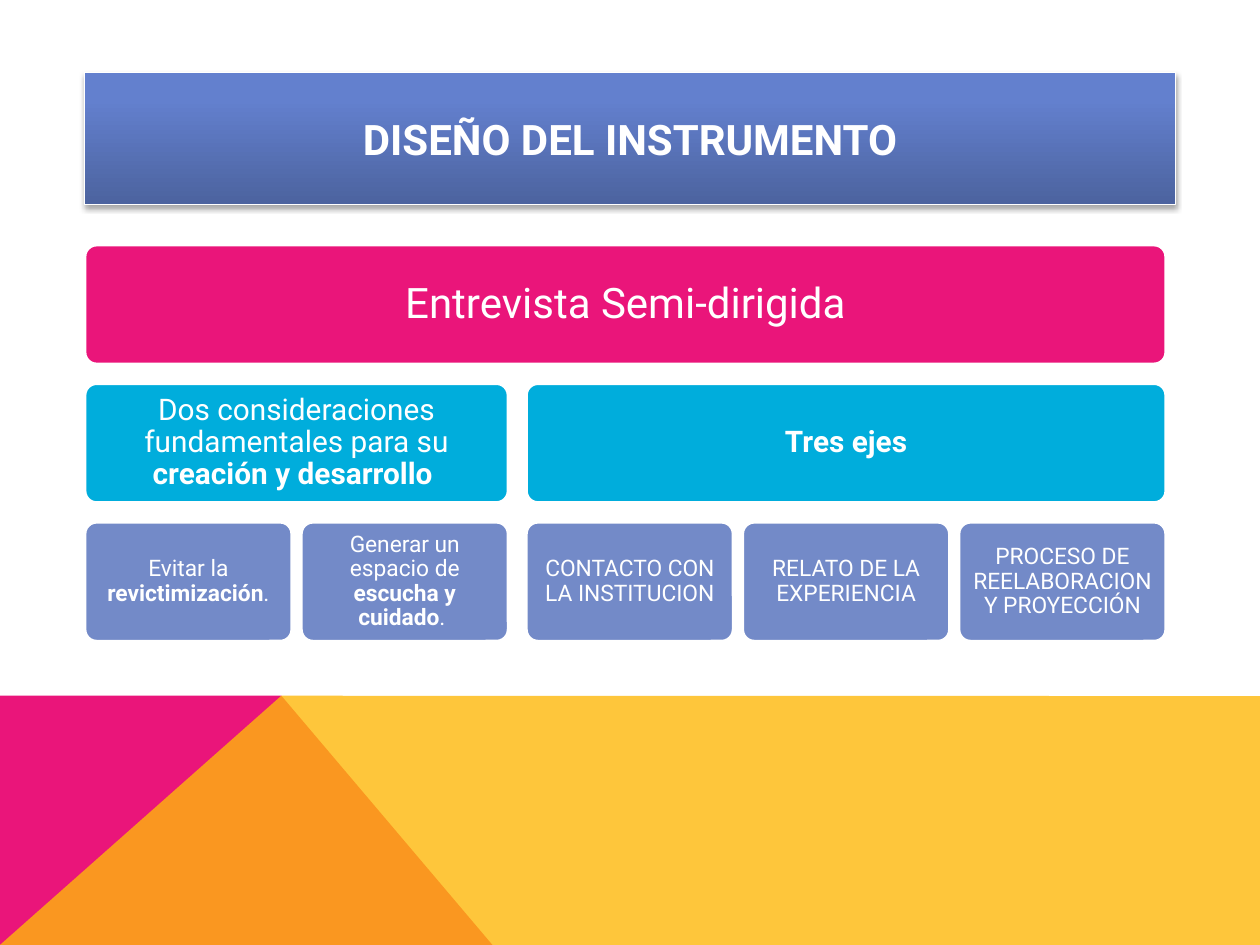
from pptx import Presentation
from pptx.dml.color import RGBColor as Rgb
from pptx.enum.shapes import MSO_SHAPE as Kind
from pptx.enum.text import MSO_ANCHOR as Anchor, PP_ALIGN as Align
from pptx.oxml import parse_xml
from pptx.oxml.ns import nsdecls
from pptx.util import Pt

WHITE = Rgb(0xFF, 0xFF, 0xFF)
PINK = Rgb(0xEA, 0x15, 0x7A)
GOLD = Rgb(0xFE, 0xB8, 0x0A)
CYAN = Rgb(0x00, 0xAD, 0xDC)
BLUE = Rgb(0x73, 0x8A, 0xC8)
DEEP = Rgb(0x4C, 0x63, 0x9F)
MID = Rgb(0x63, 0x80, 0xCE)
PALE = Rgb(0x61, 0x80, 0xD1)

LEFT, TOP = 48.4, 139.8
CELL, TALL = 118.6, 68.4
GAP, SPLIT, STEP = 5, 10, 79.2


class Deck:
    font = "Roboto"
    ink = WHITE

    def __init__(self, slide):
        self.slide = slide

    def place(self, shape, x, y, w, h):
        shape.left, shape.top = Pt(x), Pt(y)
        shape.width, shape.height = Pt(w), Pt(h)

    def label(self, shape, runs, size, space=None):
        frame = shape.text_frame
        frame.word_wrap = True
        frame.vertical_anchor = Anchor.MIDDLE
        para = frame.paragraphs[0]
        para.alignment = Align.CENTER
        para.line_spacing = space
        for text, bold in runs:
            run = para.add_run()
            run.text = text
            run.font.name = self.font
            run.font.size = Pt(size)
            run.font.bold = bold
            run.font.color.rgb = self.ink

    def edge(self, shape, width):
        shape.line.color.rgb = WHITE
        shape.line.width = Pt(width)

    def title(self, text, x, y, w, h):
        shape = self.slide.shapes.title
        self.place(shape, x, y, w, h)
        stops = "".join(
            f'<a:gs pos="{pos}000"><a:srgbClr val="{color}"/></a:gs>'
            for pos, color in ((0, DEEP), (80, MID), (100, PALE))
        )
        props = shape.element.spPr
        props.append(parse_xml(
            f'<a:gradFill {nsdecls("a")} rotWithShape="1"><a:gsLst>{stops}</a:gsLst>'
            '<a:lin ang="16200000" scaled="0"/></a:gradFill>'
        ))
        self.edge(shape, 0.75)
        props.append(parse_xml(
            f'<a:effectLst {nsdecls("a")}><a:outerShdw blurRad="{Pt(3.1)}" '
            f'dist="{Pt(1.8)}" dir="5400000" rotWithShape="0"><a:srgbClr val="000000">'
            '<a:alpha val="35000"/></a:srgbClr></a:outerShdw></a:effectLst>'
        ))
        self.label(shape, [(text, True)], 24)

    def area(self, points, color, alpha=100):
        first, *rest = [(Pt(x), Pt(y)) for x, y in points]
        build = self.slide.shapes.build_freeform(*first)
        build.add_line_segments(rest, close=True)
        shape = build.convert_to_shape()
        shape.shadow.inherit = False
        shape.fill.solid()
        shape.fill.fore_color.rgb = color
        shape.line.fill.background()
        if alpha < 100:
            tint = shape.element.spPr.find(".//{*}srgbClr")
            tint.append(parse_xml(f'<a:alpha {nsdecls("a")} val="{alpha}000"/>'))

    def box(self, row, first, last, color, size, inset, runs):
        x, end = start(first), start(last) + CELL
        shape = self.slide.shapes.add_shape(Kind.ROUNDED_RECTANGLE, 0, 0, 0, 0)
        self.place(shape, x, TOP + row * STEP, end - x, TALL)
        shape.adjustments[0] = 0.1
        shape.shadow.inherit = False
        shape.fill.solid()
        shape.fill.fore_color.rgb = color
        self.edge(shape, 2)
        frame = shape.text_frame
        frame.margin_left = frame.margin_right = Pt(inset)
        frame.margin_top = frame.margin_bottom = Pt(inset)
        self.label(shape, runs, size, 0.9)


def start(col):
    return LEFT + col * (CELL + GAP) + (SPLIT - GAP if col > 1 else 0)


def main():
    prs = Presentation()
    prs.slide_width, prs.slide_height = Pt(720), Pt(540)
    deck = Deck(prs.slides.add_slide(prs.slide_layouts[5]))

    deck.area([(0, 540), (0, 397.6), (160.8, 397.6), (281.4, 540)], PINK)
    deck.area([(0, 540), (160.8, 397.6), (720, 397.8), (720, 540)], GOLD, 80)
    deck.title("DISEÑO DEL INSTRUMENTO", 48.4, 41.6, 623.4, 75.2)

    deck.box(0, 0, 4, PINK, 24, 7.2, [("Entrevista Semi-dirigida", False)])
    deck.box(1, 0, 1, CYAN, 17, 5.1, [
        ("Dos consideraciones fundamentales para su ", False),
        ("creación y desarrollo ", True),
    ])
    deck.box(1, 2, 4, CYAN, 17, 5.1, [("Tres ejes", True)])
    leaves = [
        [("Evitar la ", False), ("revictimización", True), (".", False)],
        [("Generar un espacio de ", False), ("escucha y cuidado", True), (". ", False)],
        [("CONTACTO CON LA INSTITUCION", False)],
        [("RELATO DE LA EXPERIENCIA", False)],
        [("PROCESO DE REELABORACION Y PROYECCIÓN", False)],
    ]
    for col, runs in enumerate(leaves):
        deck.box(2, col, col, BLUE, 13, 3.9, runs)

    prs.save("out.pptx")


if __name__ == "__main__":
    main()
